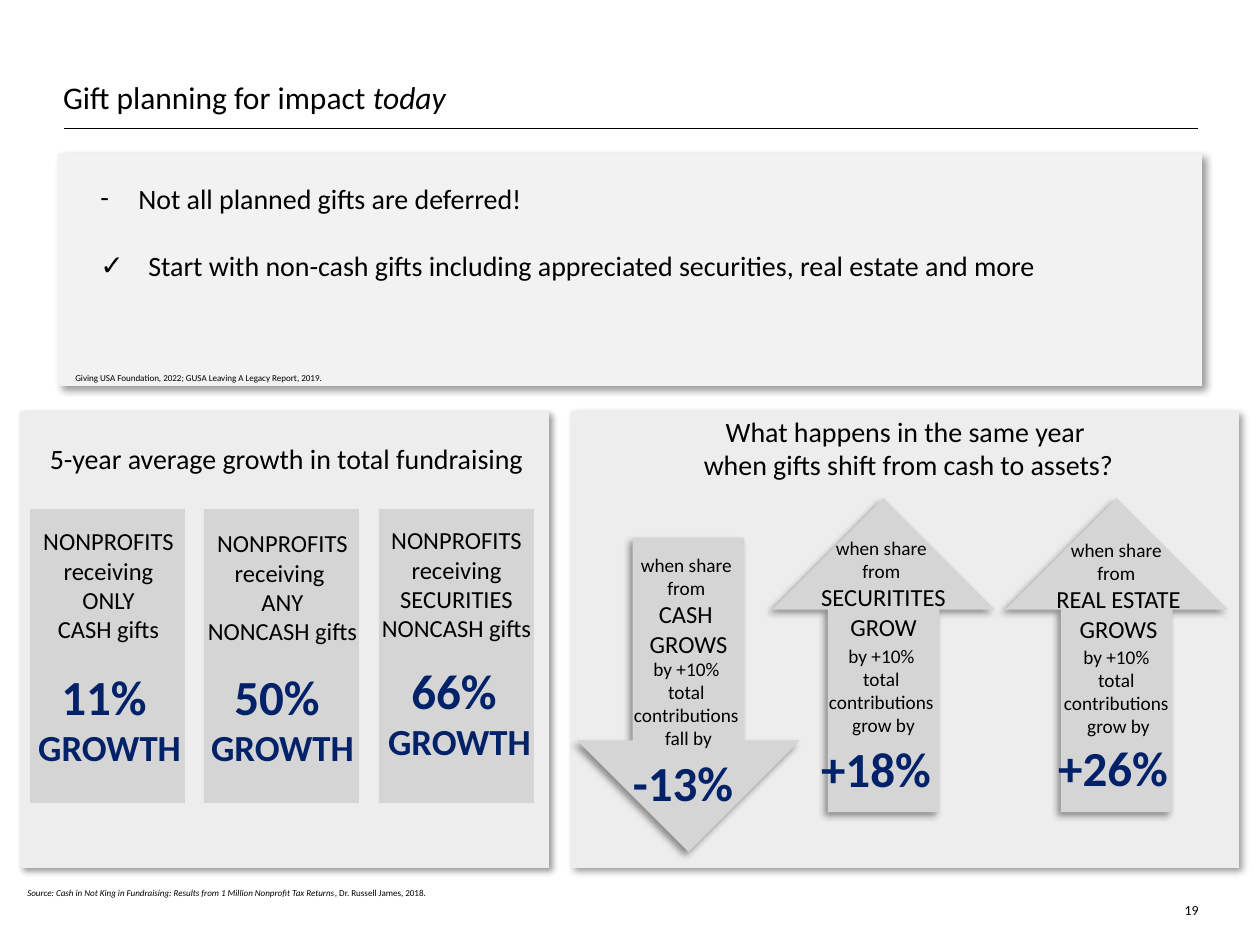
from dataclasses import dataclass, field

from lxml.etree import SubElement
from pptx import Presentation
from pptx.dml.color import RGBColor as Color
from pptx.enum.shapes import MSO_CONNECTOR as Connector, MSO_SHAPE as Shape
from pptx.enum.text import MSO_ANCHOR as Anchor, MSO_AUTO_SIZE as AutoSize, PP_ALIGN as Align
from pptx.oxml.ns import qn
from pptx.util import Pt


def ink(**values):
    return {"name": "Calibri", "color": "000000", "bold": False, "italic": False, **values}


@dataclass(frozen=True)
class Theme:
    panel: str = "EDEDED"
    top_panel: str = "F2F2F2"
    card: str = "D5D5D5"
    rule: str = "000000"
    styles: dict = field(default_factory=lambda: {
        "title": ink(size=18),
        "title_italic": ink(size=18, italic=True),
        "body": ink(size=16),
        "label": ink(size=14),
        "small": ink(size=11),
        "number": ink(size=7.9),
        "note": ink(size=9, baseline=30000),
        "note_italic": ink(size=9, italic=True, baseline=30000),
        "figure": ink(size=28, bold=True, color="012169"),
        "growth": ink(size=21, bold=True, color="012169"),
    })


THEME = Theme()
EMU_PER_PX = 914400 / 126


def px(length):
    return round(length * EMU_PER_PX)


def add_span(para, text, style):
    span = para.add_run()
    span.text = text
    for name, value in THEME.styles[style].items():
        if name == "color":
            span.font.color.rgb = Color.from_string(value)
        elif name == "baseline":
            span.font._element.set("baseline", str(value))
        else:
            setattr(span.font, name, Pt(value) if name == "size" else value)


def add_text(page, area, paras, align=Align.CENTER, **frame_values):
    box = page.shapes.add_textbox(*map(px, area))
    frame = box.text_frame
    values = {"word_wrap": True, "auto_size": AutoSize.SHAPE_TO_FIT_TEXT, **frame_values}
    for name, value in values.items():
        setattr(frame, name, value)
    for index, spans in enumerate(paras):
        para = frame.paragraphs[0] if index == 0 else frame.add_paragraph()
        para.alignment = align
        for text, style in spans:
            add_span(para, text, style)
    return box


def lines(style, *texts):
    return [[(text, style)] for text in texts]


def add_bullet(para, mark, margin, hang):
    props = para._p.get_or_add_pPr()
    props.set("marL", str(px(margin)))
    props.set("indent", str(-px(hang)))
    SubElement(props, qn("a:buFont")).set("typeface", "Calibri")
    SubElement(props, qn("a:buChar")).set("char", mark)


def add_block(page, kind, area, fill, shadow_angle=None, rotation=0):
    block = page.shapes.add_shape(kind, *map(px, area))
    block.shadow.inherit = False
    block.fill.solid()
    block.fill.fore_color.rgb = Color.from_string(fill)
    block.line.fill.background()
    block.rotation = rotation
    if shadow_angle is not None:
        effects = block._element.spPr.find(qn("a:effectLst"))
        shadow = SubElement(effects, qn("a:outerShdw"))
        values = {"blurRad": Pt(4), "dist": Pt(3), "dir": shadow_angle * 60000, "rotWithShape": 0}
        for name, value in values.items():
            shadow.set(name, str(value))
        color = SubElement(shadow, qn("a:srgbClr"))
        color.set("val", "000000")
        SubElement(color, qn("a:alpha")).set("val", "40000")


def add_rule(page, left, right, top):
    rule = page.shapes.add_connector(Connector.STRAIGHT, px(left), px(top), px(right), px(top))
    rule.line.color.rgb = Color.from_string(THEME.rule)
    rule.line.width = Pt(0.5)
    SubElement(rule._element.spPr, qn("a:effectLst"))


def add_header(page):
    add_rule(page, 64, 1198, 128)
    flush = dict.fromkeys(("margin_left", "margin_right", "margin_top", "margin_bottom"), 0)
    title = [[("Gift planning for impact ", "title"), ("today", "title_italic")]]
    add_text(page, (63, 78, 1041, 38), title, Align.LEFT, vertical_anchor=Anchor.BOTTOM, **flush)
    add_text(page, (1154, 902, 57, 16), lines("number", "19"), Align.RIGHT,
             vertical_anchor=Anchor.BOTTOM, margin_top=0, margin_bottom=0)


def add_message(page):
    add_block(page, Shape.RECTANGLE, (58, 154, 1144, 232), THEME.top_panel, 45)
    message = lines(
        "body", "Not all planned gifts are deferred!",
        "Start with non-cash gifts including appreciated securities, real estate and more")
    box = add_text(page, (87, 175, 1124, 149), message, Align.LEFT)
    first, second = box.text_frame.paragraphs
    second.space_before = Pt(19.5)
    add_bullet(first, "-", 39, 38)
    add_bullet(second, "✓", 49, 48)
    add_text(page, (63, 364, 690, 48), lines(
        "note", "Giving USA Foundation, 2022; GUSA Leaving A Legacy Report, 2019."), Align.LEFT)


def add_growth_card(page, left, label_area, labels, figure_at, figure):
    add_block(page, Shape.RECTANGLE, (left, 509, 155, 294), THEME.card)
    add_text(page, (*label_area, 131), lines("label", *labels))
    add_text(page, (*figure_at, 171, 117), lines("figure", figure) + lines("growth", "GROWTH"))


def add_growth_panel(page):
    add_block(page, Shape.RECTANGLE, (20, 411, 529, 457), THEME.panel, 45)
    add_text(page, (24, 435, 525, 47), lines("body", "5-year average growth in total fundraising"))
    cards = [
        (30, (23, 520, 171), ("NONPROFITS receiving", "ONLY", "CASH gifts"), (24, 660), "11% "),
        (204, (190, 522, 185), ("NONPROFITS receiving ", "ANY", "NONCASH gifts"),
         (197, 660), "50% "),
        (379, (364, 519, 185), ("NONPROFITS receiving SECURITIES NONCASH gifts",),
         (374, 654), "66% "),
    ]
    for card in cards:
        add_growth_card(page, *card)
    source = [[
        ("Source: Cash in Not King in Fundraising: Results from 1 Million Nonprofit Tax Returns",
         "note_italic"),
        (", Dr. Russell James, 2018.", "note")]]
    add_text(page, (15, 879, 690, 48), source, Align.LEFT)


def add_shift_arrow(page, arrow_at, rotation, tops, center, asset, verb, change, figure_left, figure):
    add_block(page, Shape.DOWN_ARROW, (*arrow_at, 223, 314), THEME.card, 135, rotation)
    share_top, total_top, figure_top = tops
    add_text(page, (center - 92, share_top, 185, 118),
             lines("small", "when share ", "from ") + lines("label", asset, verb))
    add_text(page, (center - 85, total_top, 171, 106),
             lines("small", "by +10% ", "total ", "contributions ", change))
    add_text(page, (figure_left, figure_top, 171, 72), lines("figure", figure))


def add_shift_panel(page):
    add_block(page, Shape.RECTANGLE, (571, 411, 668, 457), THEME.panel, 45)
    add_text(page, (572, 408, 673, 81), lines(
        "body", "What happens in the same year ", "when gifts shift from cash to assets?"))
    arrows = [
        ((577, 538), 0, (547, 651, 746), 688, "CASH ", "GROWS", "fall by", 603, "-13% "),
        ((772, 498), 180, (530, 638, 732), 883, "SECURITITES", "GROW", "grow by", 796, "+18% "),
        ((1005, 498), 180, (532, 639, 731), 1118, "REAL ESTATE", "GROWS", "grow by", 1033, "+26% "),
    ]
    for arrow in arrows:
        add_shift_arrow(page, *arrow)


def main():
    deck = Presentation()
    deck.slide_width, deck.slide_height = px(1260), px(945)
    page = deck.slides.add_slide(deck.slide_layouts[6])
    add_header(page)
    add_message(page)
    add_growth_panel(page)
    add_shift_panel(page)
    deck.save("out.pptx")


if __name__ == "__main__":
    main()
